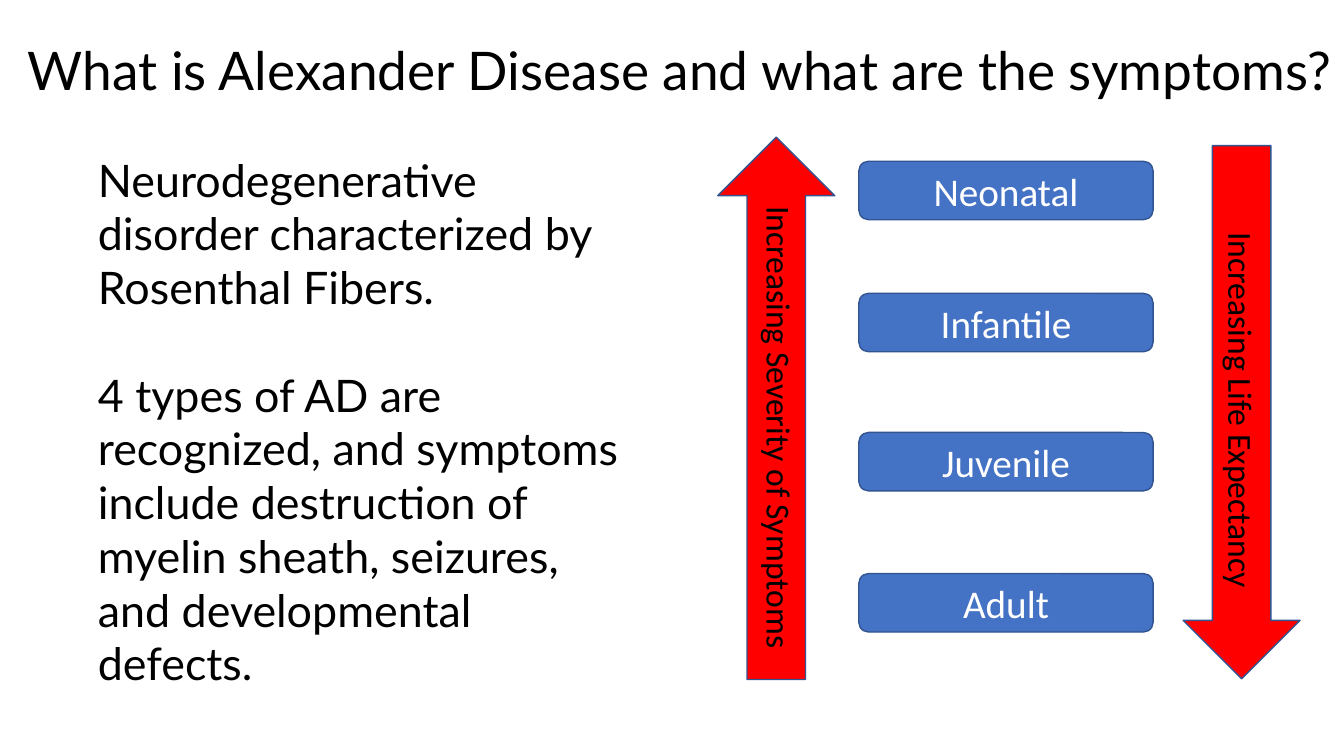
from dataclasses import dataclass
from lxml.etree import SubElement
from pptx import Presentation
from pptx.dml.color import RGBColor
from pptx.enum.shapes import MSO_SHAPE
from pptx.enum.text import MSO_ANCHOR, MSO_AUTO_SIZE, PP_ALIGN
from pptx.oxml.ns import qn
from pptx.util import Inches, Pt


@dataclass
class Theme:
    ink: RGBColor = RGBColor(0, 0, 0)
    white: RGBColor = RGBColor(255, 255, 255)
    blue: RGBColor = RGBColor.from_string("4472C4")
    edge: RGBColor = RGBColor.from_string("325491")
    red: RGBColor = RGBColor(255, 0, 0)
    head: str = "Lato"
    base: str = "Calibri"
    title: int = 38
    body: int = 32
    stage: int = 28
    note: int = 24


theme = Theme()
deck = Presentation()
deck.slide_width, deck.slide_height = Inches(13.33), Inches(7.5)
slide = deck.slides.add_slide(deck.slide_layouts[1])
shapes = slide.shapes


def area(left, top, width, height):
    """Turn percentages of the slide's size into lengths."""
    wide, high = deck.slide_width / 100, deck.slide_height / 100
    return int(left * wide), int(top * high), int(width * wide), int(height * high)


def write(para, text, size, font, color, align=PP_ALIGN.LEFT):
    para.alignment = align
    run = para.add_run()
    run.text = text
    run.font.size, run.font.name = Pt(size), font
    run.font.color.rgb = color


# Title and body
title, body = shapes.title, slide.placeholders[1]
for holder, place in [
    (title, area(0.5, 0, 100.15, 19.33)),
    (body, area(6.53, 19.47, 40.96, 73.2)),
]:
    holder.left, holder.top, holder.width, holder.height = place
    holder.text_frame.auto_size = MSO_AUTO_SIZE.NONE
    holder.text_frame.word_wrap = True

title.text_frame.vertical_anchor = MSO_ANCHOR.MIDDLE
head = title.text_frame.paragraphs[0]
head.line_spacing = 0.9
write(head, "What is Alexander Disease and what are the symptoms?",
      theme.title, theme.head, theme.ink, PP_ALIGN.CENTER)

body.text_frame.vertical_anchor = MSO_ANCHOR.TOP
facts = [
    "Neurodegenerative disorder characterized by Rosenthal Fibers.",
    "4 types of AD are recognized, and symptoms include destruction of "
    "myelin sheath, seizures, and developmental defects.",
]
for row, fact in enumerate(facts):
    para = body.text_frame.paragraphs[0] if row == 0 else body.text_frame.add_paragraph()
    para.space_before = Pt(row * theme.body * 1.2)
    write(para, fact, theme.body, theme.head, theme.ink)
    props = para._p.get_or_add_pPr()
    props.set("marL", "0")
    props.set("indent", "0")
    SubElement(props, qn("a:buNone"))

# Stages, from earliest to latest onset
stages = [("Neonatal", 21.33), ("Infantile", 38.8), ("Juvenile", 57.2), ("Adult", 75.87)]
solids = []
for name, top in stages:
    pill = shapes.add_shape(MSO_SHAPE.ROUNDED_RECTANGLE, *area(63.9, top, 21.9, 7.73))
    solids.append((pill, theme.blue))
    frame = pill.text_frame
    frame.margin_top = frame.margin_bottom = 0
    frame.vertical_anchor = MSO_ANCHOR.MIDDLE
    write(frame.paragraphs[0], name, theme.stage, theme.base, theme.white, PP_ALIGN.CENTER)

# Arrows with their captions
trends = [
    ("Increasing Severity of Symptoms", 270, (37.58, 46.27, 40.36, 15.47), (40.06, 54.53)),
    ("Increasing Life Expectancy", 90, (72.54, 46.8, 39.68, 15.47), (74.42, 58)),
]
for text, turn, place, spot in trends:
    arrow = shapes.add_shape(MSO_SHAPE.RIGHT_ARROW, *area(*place))
    arrow.rotation = turn
    solids.append((arrow, theme.red))
    note = shapes.add_textbox(*area(*spot, 35.93, 6.67))
    note.rotation = 90
    note.text_frame.word_wrap = True
    write(note.text_frame.paragraphs[0], text, theme.note, theme.base, theme.ink)

for solid, color in solids:
    solid.shadow.inherit = False
    solid.fill.solid()
    solid.fill.fore_color.rgb = color
    solid.line.color.rgb = theme.edge
    solid.line.width = Pt(1)

deck.save("out.pptx")
